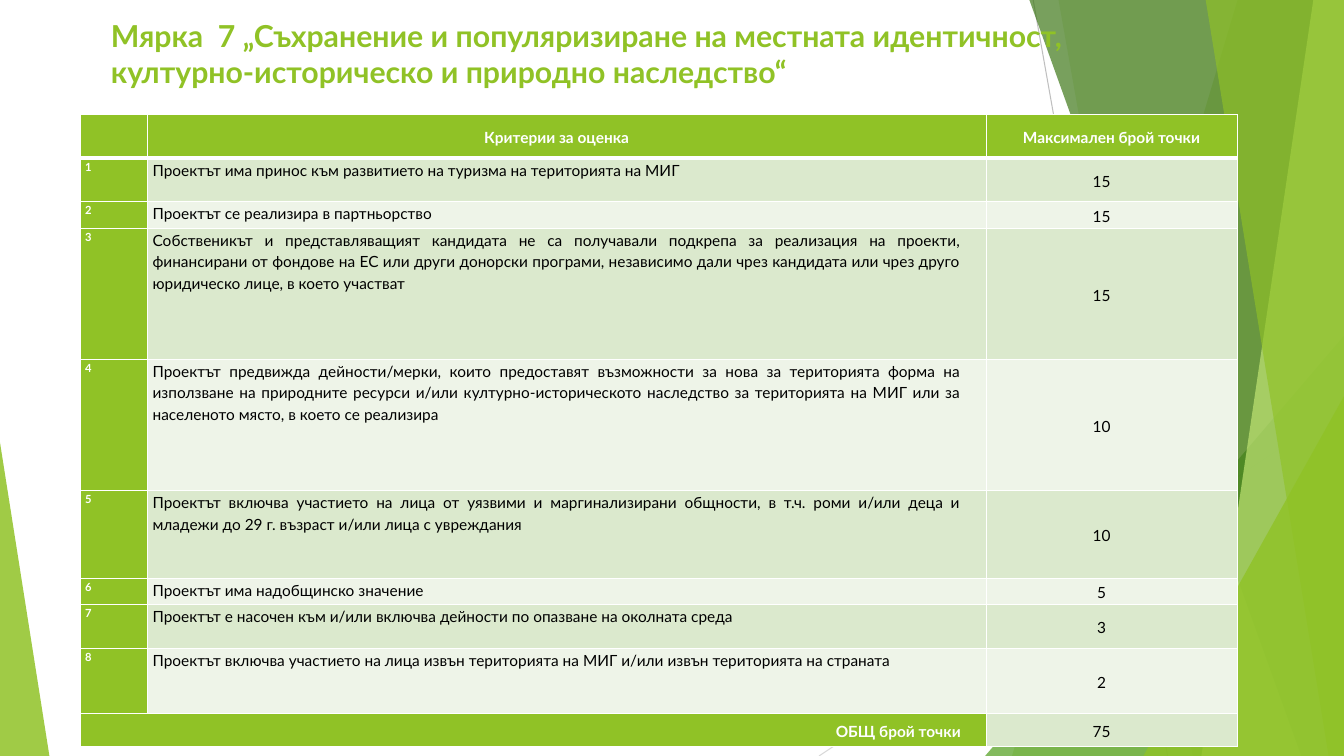
from dataclasses import dataclass

from lxml import etree
from pptx import Presentation
from pptx import util as u
from pptx.dml.color import RGBColor
from pptx.enum import shapes, text
from pptx.oxml import ns

Pt = u.Pt


@dataclass(frozen=True)
class Theme:
    font: str = "Lato"
    title_size: float = 21.6
    body_size: float = 11
    number_size: float = 8
    green: str = "90C226"
    dark_green: str = "3F7819"
    mid_green: str = "54A021"
    light_green: str = "C0E474"
    odd_row: str = "DBE9CD"
    even_row: str = "EEF4E8"
    white: str = "FFFFFF"
    black: str = "000000"
    grey: str = "BFBFBF"
    pale_grey: str = "D9D9D9"


THEME = Theme()
WIDTH, HEIGHT, TOP = 960, 540, -0.6
ALIGN = text.PP_ALIGN

TITLE = ("Мярка  7 „Съхранение и популяризиране на местната идентичност, "
         "културно-историческо и природно наследство“")
HEADERS = ["", "Критерии за оценка", "Максимален брой точки"]
CRITERIA = [
    ("Проектът има принос към развитието на туризма на територията на МИГ", 15),
    ("Проектът се реализира в партньорство", 15),
    ("Собственикът и представляващият кандидата не са получавали подкрепа за "
     "реализация на проекти, финансирани от фондове на ЕС или други донорски "
     "програми, независимо дали чрез кандидата или чрез друго юридическо лице, "
     "в което участват", 15),
    ("Проектът предвижда дейности/мерки, които предоставят възможности за нова "
     "за територията форма на използване на природните ресурси и/или "
     "културно-историческото наследство за територията на МИГ или за "
     "населеното място, в което се реализира", 10),
    ("Проектът включва участието на лица от уязвими и маргинализирани общности, "
     "в т.ч. роми и/или деца и младежи до 29 г. възраст и/или лица с увреждания", 10),
    ("Проектът има надобщинско значение", 5),
    ("Проектът е насочен към и/или включва дейности по опазване на околната среда", 3),
    ("Проектът включва участието на лица извън територията на МИГ и/или извън "
     "територията на страната", 2),
]
COLUMN_WIDTHS = [48.2, 599, 179.4]
ROW_HEIGHTS = [31, 31, 19, 93.8, 93.8, 62.4, 19, 31, 46.8, 23.6]


def rgb(color):
    return RGBColor.from_string(color)


def format_runs(paragraph, size, color, bold):
    for run in paragraph.runs:
        run.font.name = THEME.font
        run.font.size = Pt(size)
        run.font.bold = bold
        run.font.color.rgb = rgb(color)


# Background decoration
def paint(shape, color, opacity):
    shape.shadow.inherit = False
    shape.line.fill.background()
    shape.fill.solid()
    shape.fill.fore_color.rgb = rgb(color)
    color_element = shape.element.spPr.find(".//" + ns.qn("a:srgbClr"))
    etree.SubElement(color_element, ns.qn("a:alpha"), val=str(opacity * 1000))


def add_ray(slide, start, end, color):
    line = slide.shapes.add_connector(
        shapes.MSO_CONNECTOR.STRAIGHT, *map(Pt, start + end))
    line.line.color.rgb = rgb(color)
    line.line.width = Pt(0.75)
    etree.SubElement(line.element.spPr, ns.qn("a:effectLst"))


def add_panel(slide, top_x, bottom_x, color, opacity):
    """Slanted panel that reaches the right edge of the slide."""
    builder = slide.shapes.build_freeform(Pt(top_x), Pt(TOP), scale=1.0)
    corners = [(WIDTH, TOP), (WIDTH, HEIGHT), (bottom_x, HEIGHT)]
    builder.add_line_segments([(Pt(x), Pt(y)) for x, y in corners], close=True)
    paint(builder.convert_to_shape(), color, opacity)


def add_triangle(slide, left, top, width, apex, color, opacity):
    """Triangle that stands on the bottom edge of the slide."""
    shape = slide.shapes.add_shape(
        shapes.MSO_SHAPE.ISOSCELES_TRIANGLE,
        Pt(left), Pt(top), Pt(width), Pt(HEIGHT - top))
    shape.adjustments[0] = apex
    paint(shape, color, opacity)


def add_decoration(slide):
    add_ray(slide, (738, 0), (834, HEIGHT), THEME.grey)
    add_ray(slide, (WIDTH, 290), (585, HEIGHT), THEME.pale_grey)
    add_panel(slide, 884.2, 722.9, THEME.green, 30)
    add_panel(slide, 756, 851.8, THEME.green, 20)
    add_triangle(slide, 703.7, 239.8, 256.3, 1, THEME.mid_green, 72)
    add_panel(slide, 735.1, 929.5, THEME.dark_green, 70)
    add_panel(slide, 938.2, 858.2, THEME.light_green, 70)
    add_panel(slide, 861.1, 949, THEME.green, 65)
    add_triangle(slide, 816.7, 283, 143.3, 1, THEME.green, 80)
    add_triangle(slide, 0, 316.1, 35.3, 0, THEME.green, 85)


# Title
def set_title(slide):
    title = slide.shapes.title
    title.left, title.top, title.width, title.height = map(Pt, (72, 8.6, 714.2, 99.4))
    frame = title.text_frame
    frame.text = TITLE
    frame.word_wrap = True
    frame.auto_size = text.MSO_AUTO_SIZE.NONE
    frame.vertical_anchor = text.MSO_ANCHOR.TOP
    frame.paragraphs[0].alignment = ALIGN.LEFT
    format_runs(frame.paragraphs[0], THEME.title_size, THEME.green, True)
    slide.shapes.element.append(title.element)  # in front of the decoration


# Table
def set_borders(cell, top, bottom):
    properties = cell._tc.get_or_add_tcPr()
    for side, width in (("L", 1), ("R", 1), ("T", top), ("B", bottom)):
        line = etree.SubElement(properties, ns.qn("a:ln" + side), w=str(Pt(width)))
        fill = etree.SubElement(line, ns.qn("a:solidFill"))
        etree.SubElement(fill, ns.qn("a:srgbClr"), val=THEME.white)


def fill_cell(cell, words, fill, color=THEME.black, bold=False, align=ALIGN.CENTER,
              size=THEME.body_size, anchor=text.MSO_ANCHOR.MIDDLE, right=18):
    cell.fill.solid()
    cell.fill.fore_color.rgb = rgb(fill)
    cell.margin_left, cell.margin_right = Pt(3.6), Pt(right)
    cell.margin_top = cell.margin_bottom = 0
    cell.vertical_anchor = anchor
    paragraph = cell.text_frame.paragraphs[0]
    paragraph.text = str(words)
    paragraph.alignment = align
    paragraph.line_spacing = 1.15
    format_runs(paragraph, size, color, bold)


def add_criteria_table(slide):
    table = slide.shapes.add_table(
        len(ROW_HEIGHTS), len(COLUMN_WIDTHS), Pt(57.2), Pt(82),
        Pt(sum(COLUMN_WIDTHS)), Pt(sum(ROW_HEIGHTS))).table
    table.first_row = table.horz_banding = False
    for column, width in zip(table.columns, COLUMN_WIDTHS):
        column.width = Pt(width)
    for index, (row, height) in enumerate(zip(table.rows, ROW_HEIGHTS)):
        row.height = Pt(height)
        for cell in row.cells:
            set_borders(cell, top=3 if index == 1 else 1, bottom=3 if index == 0 else 1)

    strong = dict(fill=THEME.green, color=THEME.white, bold=True)
    top_justified = dict(align=ALIGN.JUSTIFY, anchor=text.MSO_ANCHOR.TOP)

    # Header row
    for column, header in enumerate(HEADERS):
        fill_cell(table.cell(0, column), header, right=3.6 if column == 2 else 18, **strong)

    # Numbered criteria with their points
    for number, (criterion, points) in enumerate(CRITERIA, start=1):
        band = THEME.odd_row if number % 2 else THEME.even_row
        fill_cell(table.cell(number, 0), number, size=THEME.number_size,
                  **strong, **top_justified)
        fill_cell(table.cell(number, 1), criterion, band, **top_justified)
        fill_cell(table.cell(number, 2), points, band)

    # Total row
    last = len(ROW_HEIGHTS) - 1
    table.cell(last, 0).merge(table.cell(last, 1))
    fill_cell(table.cell(last, 0), "ОБЩ брой точки", align=ALIGN.RIGHT, **strong)
    fill_cell(table.cell(last, 2), sum(points for _, points in CRITERIA), THEME.odd_row)


def main():
    presentation = Presentation()
    presentation.slide_width, presentation.slide_height = Pt(WIDTH), Pt(HEIGHT)
    slide = presentation.slides.add_slide(presentation.slide_layouts[5])
    add_decoration(slide)
    set_title(slide)
    add_criteria_table(slide)
    presentation.save("out.pptx")


if __name__ == "__main__":
    main()
